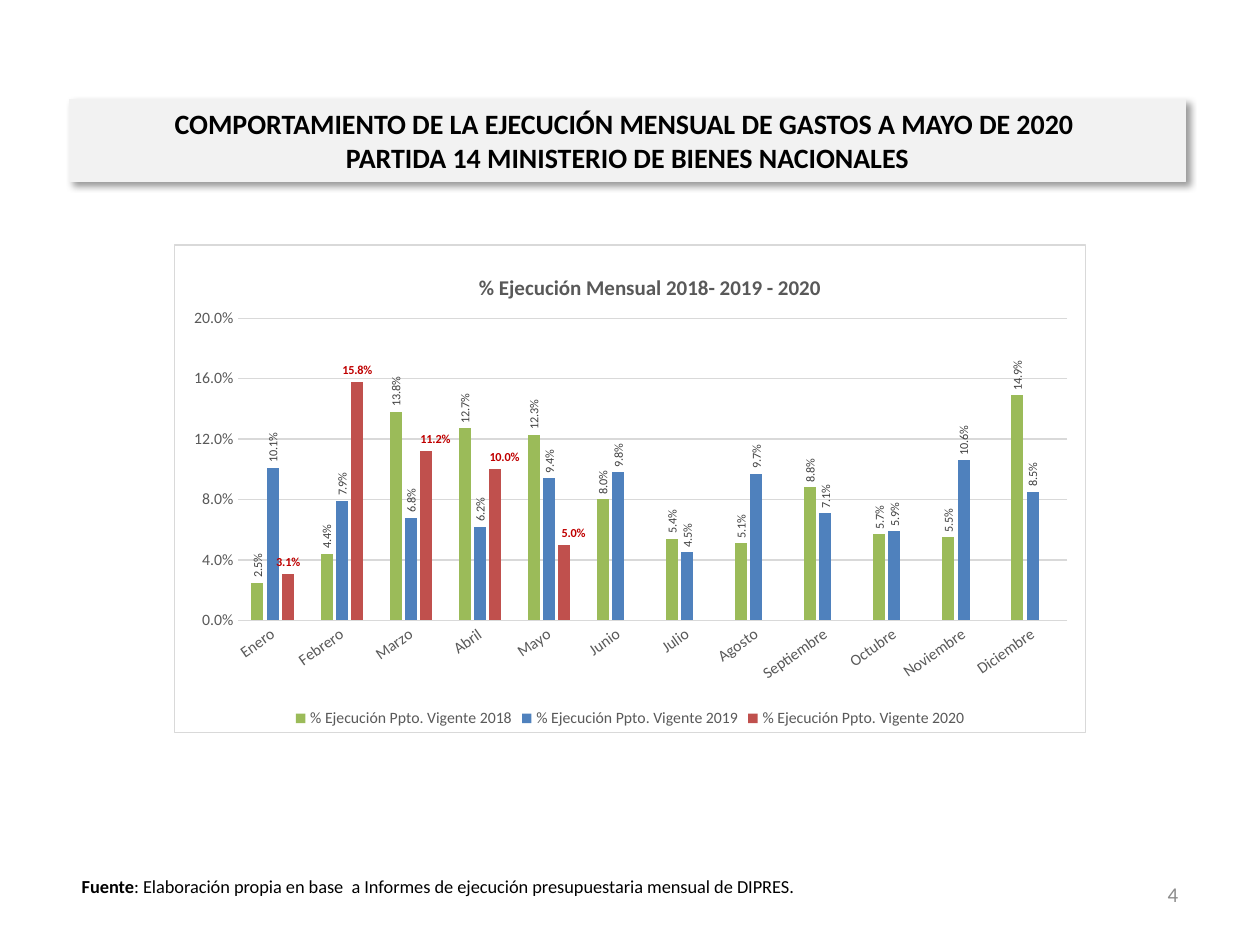
from pptx import Presentation
from pptx.chart.data import CategoryChartData
from pptx.dml.color import RGBColor
from pptx.enum.chart import XL_CHART_TYPE, XL_LABEL_POSITION, XL_LEGEND_POSITION, XL_TICK_MARK
from pptx.enum.text import MSO_ANCHOR, PP_ALIGN
from pptx.oxml import parse_xml
from pptx.oxml.ns import nsdecls, qn
from pptx.util import Inches, Pt

COLUMNS = XL_CHART_TYPE.COLUMN_CLUSTERED
OUTSIDE = XL_LABEL_POSITION.OUTSIDE_END
BOTTOM = XL_LEGEND_POSITION.BOTTOM
NO_TICK = XL_TICK_MARK.NONE
MIDDLE, TOP = MSO_ANCHOR.MIDDLE, MSO_ANCHOR.TOP
LEFT, CENTER, RIGHT = PP_ALIGN.LEFT, PP_ALIGN.CENTER, PP_ALIGN.RIGHT

MONTHS = ["Enero", "Febrero", "Marzo", "Abril", "Mayo", "Junio", "Julio", "Agosto",
          "Septiembre", "Octubre", "Noviembre", "Diciembre"]
SERIES = [
    ("2018", "9BBB59", "404040", False,
     [0.025, 0.044, 0.138, 0.127, 0.123, 0.08, 0.054, 0.051, 0.088, 0.057, 0.055, 0.149]),
    ("2019", "4F81BD", "404040", False,
     [0.101, 0.079, 0.068, 0.062, 0.094, 0.098, 0.045, 0.097, 0.071, 0.059, 0.106, 0.085]),
    ("2020", "C0504D", "C00000", True,
     [0.031, 0.158, 0.112, 0.1, 0.05] + [None] * 7),
]
SHIFTED_MONTHS = (2, 3, 4)


def rgb(value):
    return RGBColor.from_string(value)


class Deck:
    FONT = "Calibri"
    INK, GREY, PALE = "000000", "595959", "8C8C8C"
    PANEL, RULE, WHITE = "F2F2F2", "D9D9D9", "FFFFFF"
    COLS, ROWS = 100, 75
    PERCENT = "0.0%"

    def __init__(self):
        self.prs = Presentation()
        self.prs.slide_width, self.prs.slide_height = Inches(10), Inches(7.5)
        self.s = self.prs.slides.add_slide(self.prs.slide_layouts[5])

    def box(self, col, row, cols, rows):
        w = self.prs.slide_width / self.COLS
        h = self.prs.slide_height / self.ROWS
        return [round(n) for n in (col * w, row * h, cols * w, rows * h)]

    def style(self, font, size, color, bold=False):
        font.name, font.size, font.bold = self.FONT, Pt(size), bold
        font.color.rgb = rgb(color)

    def run(self, p, text, size, color, bold=False):
        r = p.add_run()
        r.text = text
        self.style(r.font, size, color, bold)

    def title(self, lines, place):
        sp = self.s.shapes.title
        sp.left, sp.top, sp.width, sp.height = self.box(*place)
        sp.fill.solid()
        sp.fill.fore_color.rgb = rgb(self.PANEL)
        sp.line.color.rgb = rgb(self.PANEL)
        sp.line.width = Pt(0.75)
        sp._element.spPr.append(parse_xml(
            f'<a:effectLst {nsdecls("a")}><a:outerShdw blurRad="50800" dist="38100" '
            'dir="2700000" algn="tl" rotWithShape="0"><a:srgbClr val="000000">'
            '<a:alpha val="40000"/></a:srgbClr></a:outerShdw></a:effectLst>'))
        tf = sp.text_frame
        tf.word_wrap, tf.vertical_anchor = True, MIDDLE
        p = tf.paragraphs[0]
        p.alignment = CENTER
        for i, line in enumerate(lines):
            if i:
                p.add_line_break()
            self.run(p, line, 16, self.INK, True)

    def text(self, runs, place, size, color, align=LEFT, anchor=TOP):
        tf = self.s.shapes.add_textbox(*self.box(*place)).text_frame
        tf.word_wrap, tf.vertical_anchor = True, anchor
        p = tf.paragraphs[0]
        p.alignment = align
        for words, bold in runs:
            self.run(p, words, size, color, bold)

    def chart(self, heading, prefix, months, series, place):
        data = CategoryChartData(number_format=self.PERCENT)
        data.categories = months
        for year, _, _, _, values in series:
            data.add_series(f"{prefix} {year}", values)
        chart = self.s.shapes.add_chart(COLUMNS, *self.box(*place), data).chart
        self.style(chart.font, 10, self.INK)
        self.frame(chart)
        chart.has_title = True
        title = chart.chart_title
        self.run(title.text_frame.paragraphs[0], heading, 12, self.GREY, True)
        title.include_in_layout = False
        self.layout(title._element, 1, xMode="edge", yMode="edge", x=0.33, y=0.05)
        chart.has_legend = True
        chart.legend.position = BOTTOM
        chart.legend.include_in_layout = False
        self.style(chart.legend.font, 9, self.GREY)
        self.axes(chart)
        self.layout(chart._chartSpace.find(".//" + qn("c:plotArea")), 0, layoutTarget="inner",
                    xMode="edge", yMode="edge", x=0.07, y=0.15, w=0.91, h=0.62)
        plot = chart.plots[0]
        plot.gap_width, plot.overlap, plot.vary_by_categories = 219, -27, False
        for bars, (_, fill, ink, bold, _) in zip(plot.series, series):
            bars.format.fill.solid()
            bars.format.fill.fore_color.rgb = rgb(fill)
            self.labels(bars.data_labels, ink, bold)
        for i in SHIFTED_MONTHS:
            label = bars.points[i].data_label
            self.style(label.font, 7, ink, bold)
            label.position = OUTSIDE
            self.layout(bars.data_labels._element.findall(qn("c:dLbl"))[-1], 1, x=0.01, y=0)

    def layout(self, element, index, **settings):
        for old in element.findall(qn("c:layout")):
            element.remove(old)
        items = "".join(f'<c:{key} val="{value}"/>' for key, value in settings.items())
        element.insert(index, parse_xml(
            f'<c:layout {nsdecls("c")}><c:manualLayout>{items}</c:manualLayout></c:layout>'))

    def rotate(self, element, degrees):
        body = element.find(".//" + qn("a:bodyPr"))
        body.set("rot", str(degrees * 60000))
        body.set("vert", "horz")

    def frame(self, chart):
        area = parse_xml(
            f'<c:spPr {nsdecls("c", "a")}><a:solidFill><a:srgbClr val="{self.WHITE}"/></a:solidFill>'
            f'<a:ln w="9525"><a:solidFill><a:srgbClr val="{self.RULE}"/></a:solidFill></a:ln></c:spPr>')
        chart._chartSpace.find(qn("c:chart")).addnext(area)

    def axes(self, chart):
        cat, val = chart.category_axis, chart.value_axis
        for axis in (cat, val):
            axis.major_tick_mark = axis.minor_tick_mark = NO_TICK
            self.style(axis.tick_labels.font, 9, self.GREY)
        self.rotate(cat._element, -35)
        val.minimum_scale, val.maximum_scale, val.major_unit = 0, 0.2, 0.04
        val.tick_labels.number_format = self.PERCENT
        val.tick_labels.number_format_is_linked = False
        val.format.line.fill.background()
        for line in (cat.format.line, val.major_gridlines.format.line):
            line.color.rgb = rgb(self.RULE)
            line.width = Pt(0.75)

    def labels(self, labels, ink, bold):
        labels.show_value, labels.position = True, OUTSIDE
        labels.number_format, labels.number_format_is_linked = self.PERCENT, False
        self.style(labels.font, 7, ink, bold)
        if not bold:
            self.rotate(labels._element, -90)


def main():
    deck = Deck()
    deck.title(["COMPORTAMIENTO DE LA EJECUCIÓN MENSUAL DE GASTOS A MAYO DE 2020 ",
                "PARTIDA 14 MINISTERIO DE BIENES NACIONALES"], (5.5, 7.9, 88.6, 6.5))
    deck.chart("% Ejecución Mensual 2018- 2019 - 2020", "% Ejecución Ppto. Vigente",
               MONTHS, SERIES, (13.8, 19.4, 72.4, 38.8))
    deck.text([("Fuente", True),
               (": Elaboración propia en base  a Informes de ejecución presupuestaria "
                "mensual de DIPRES.", False)], (5.5, 69, 91.9, 4), 10.5, Deck.INK)
    deck.text([("4", False)], (71.2, 69, 23.3, 4), 12, Deck.PALE, RIGHT, MIDDLE)
    deck.prs.save("out.pptx")


if __name__ == "__main__":
    main()
